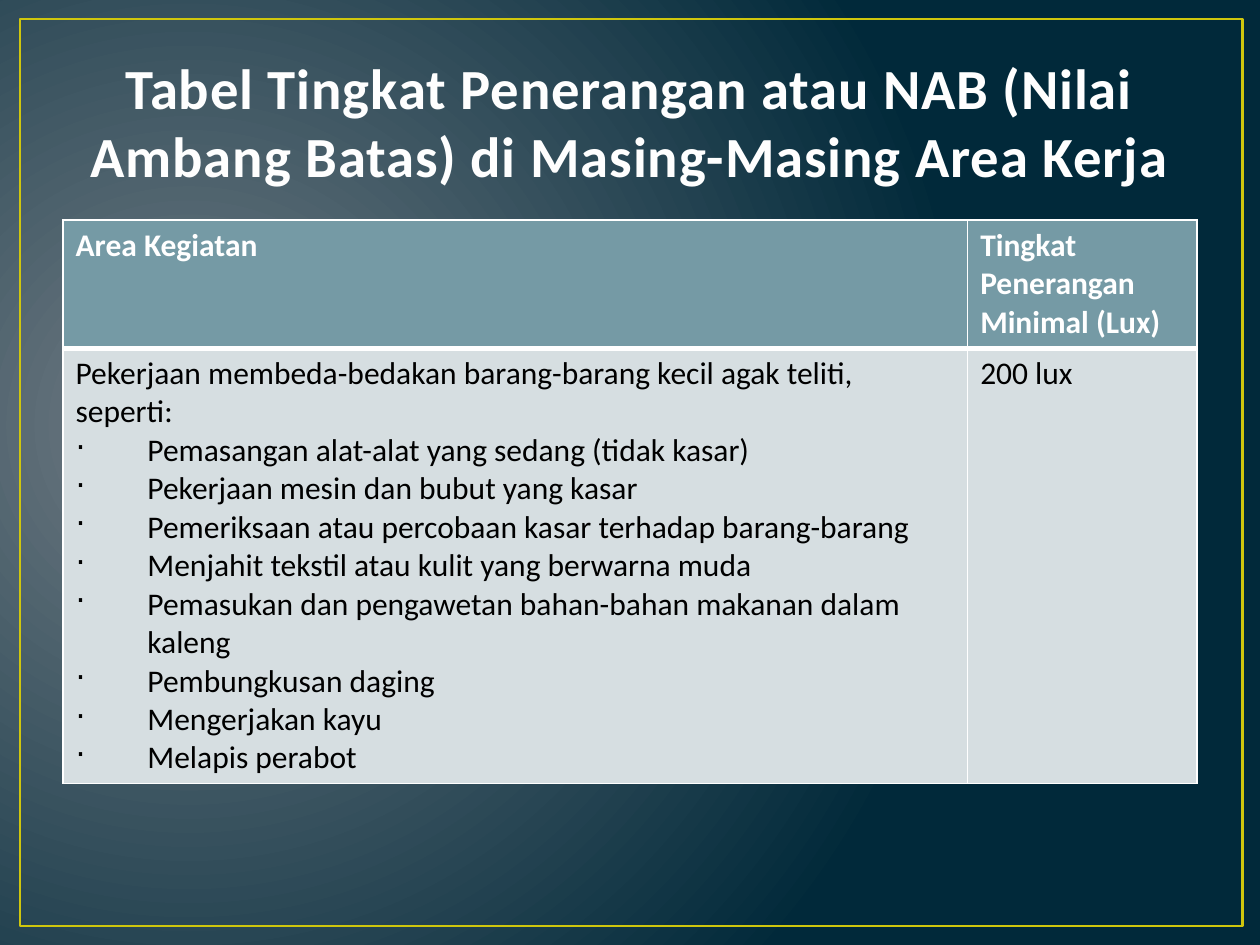
import pptx
import pptx.util
import pptx.dml.color
import pptx.enum.shapes
import pptx.enum.text
import pptx.oxml
from dataclasses import dataclass

NS = 'xmlns:a="http://schemas.openxmlformats.org/drawingml/2006/main"'
Pt = pptx.util.Pt


@dataclass
class Theme:
    font: str = "Calibri"
    glow: str = "717C84"
    night: str = "01293A"
    frame: str = "CFC60D"
    title: str = "FEFEFE"
    edge: str = "384F55"
    white: str = "FFFFFF"
    ink: str = "000000"
    head: str = "759AA5"
    body: str = "D6DEE1"
    big: float = 32.4
    text: float = 18


def rgb(code):
    return pptx.dml.color.RGBColor.from_string(code)


def node(tag, attrs="", inner=""):
    return pptx.oxml.parse_xml(f"<a:{tag} {NS} {attrs}>{inner}</a:{tag}>")


def line(tag, width, code):
    fill = f'<a:solidFill><a:srgbClr val="{code}"/></a:solidFill>'
    return node(tag, f'w="{int(Pt(width))}"', fill)


class Deck:
    def __init__(self, theme):
        self.theme = theme
        self.prs = pptx.Presentation()
        self.prs.slide_width = pptx.util.Inches(10)
        self.prs.slide_height = pptx.util.Inches(7.5)
        self.slide = self.prs.slides.add_slide(self.prs.slide_layouts[5])

    def box(self, left, top, width, height):
        """Turn shares of the slide into lengths."""
        wide, high = self.prs.slide_width, self.prs.slide_height
        return [int(n) for n in (left * wide, top * high, width * wide, height * high)]

    def style(self, par, size, color, bold):
        for run in par.runs:
            run.font.name = self.theme.font
            run.font.size = Pt(size)
            run.font.bold = bold
            run.font.color.rgb = rgb(color)

    def back(self):
        """Radial glow from the left side."""
        t = self.theme
        self.slide.background.fill.solid()
        props = self.slide.element.cSld.bg.bgPr
        stops = "".join(f'<a:gs pos="{pos}"><a:srgbClr val="{code}"/></a:gs>'
                        for pos, code in ((0, t.glow), (100000, t.night)))
        props.replace(props[0], node(
            "gradFill", "",
            f'<a:gsLst>{stops}</a:gsLst><a:path path="circle">'
            '<a:fillToRect l="15000" t="50000" r="85000" b="60000"/></a:path>'))

    def frame(self, *place):
        kind = pptx.enum.shapes.MSO_SHAPE.RECTANGLE
        shape = self.slide.shapes.add_shape(kind, *self.box(*place))
        shape.shadow.inherit = False
        shape.fill.background()
        shape.line.color.rgb = rgb(self.theme.frame)
        shape.line.width = Pt(1.5)

    def title(self, text, *place):
        t = self.theme
        shape = self.slide.shapes.title
        shape.left, shape.top, shape.width, shape.height = self.box(*place)
        frame = shape.text_frame
        frame.text = text
        frame.word_wrap = True
        frame.auto_size = pptx.enum.text.MSO_AUTO_SIZE.NONE
        frame.vertical_anchor = pptx.enum.text.MSO_ANCHOR.BOTTOM
        par = frame.paragraphs[0]
        par.alignment = pptx.enum.text.PP_ALIGN.CENTER
        self.style(par, t.big, t.title, True)
        props = par.runs[0]._r.get_or_add_rPr()
        props.set("spc", "50")
        props.insert(0, line("ln", 1.05, t.edge))

    def bullet(self, par, gap):
        props = par._p.get_or_add_pPr()
        props.set("marL", str(int(gap)))
        props.set("indent", str(-int(gap)))
        props.append(node("buChar", 'char="·"'))

    def border(self, cell, base):
        props = cell._tc.get_or_add_tcPr()
        widths = {"lnL": 1, "lnR": 1, "lnT": 1, "lnB": base}
        for spot, (side, width) in enumerate(widths.items()):
            props.insert(spot, line(side, width, self.theme.white))

    def table(self, rows, cols, highs, *place):
        """Lines after the first in a cell are bullets."""
        t = self.theme
        grid = self.slide.shapes.add_table(len(rows), len(cols), *self.box(*place)).table
        for col, share in zip(grid.columns, cols):
            col.width = int(share * self.prs.slide_width)
        for row, share in zip(grid.rows, highs):
            row.height = int(share * self.prs.slide_height)
        for y, row in enumerate(rows):
            head = y == 0
            for x, lines in enumerate(row):
                cell = grid.cell(y, x)
                cell.text_frame.text = "\n".join(lines)
                cell.fill.solid()
                cell.fill.fore_color.rgb = rgb(t.head if head else t.body)
                self.border(cell, 3 if head else 1)
                for n, par in enumerate(cell.text_frame.paragraphs):
                    if n:
                        self.bullet(par, pptx.util.Inches(0.57))
                    self.style(par, t.text, t.white if head else t.ink, head)


def main():
    deck = Deck(Theme())
    deck.back()
    deck.frame(0.016, 0.02, 0.97, 0.96)
    deck.title("Tabel Tingkat Penerangan atau NAB (Nilai Ambang Batas) "
               "di Masing-Masing Area Kerja", 0.05, 0.04, 0.9, 1 / 6)

    # Lighting levels by work area
    work = [
        "Pekerjaan membeda-bedakan barang-barang kecil agak teliti, seperti:",
        "Pemasangan alat-alat yang sedang (tidak kasar)",
        "Pekerjaan mesin dan bubut yang kasar",
        "Pemeriksaan atau percobaan kasar terhadap barang-barang",
        "Menjahit tekstil atau kulit yang berwarna muda",
        "Pemasukan dan pengawetan bahan-bahan makanan dalam kaleng",
        "Pembungkusan daging",
        "Mengerjakan kayu",
        "Melapis perabot",
    ]
    rows = [
        [["Area Kegiatan"], ["Tingkat Penerangan Minimal (Lux)"]],
        [work, ["200 lux"]],
    ]
    deck.table(rows, [0.718, 0.182], [0.13, 0.46], 0.05, 0.233, 0.9, 0.59)
    deck.prs.save("out.pptx")


if __name__ == "__main__":
    main()
